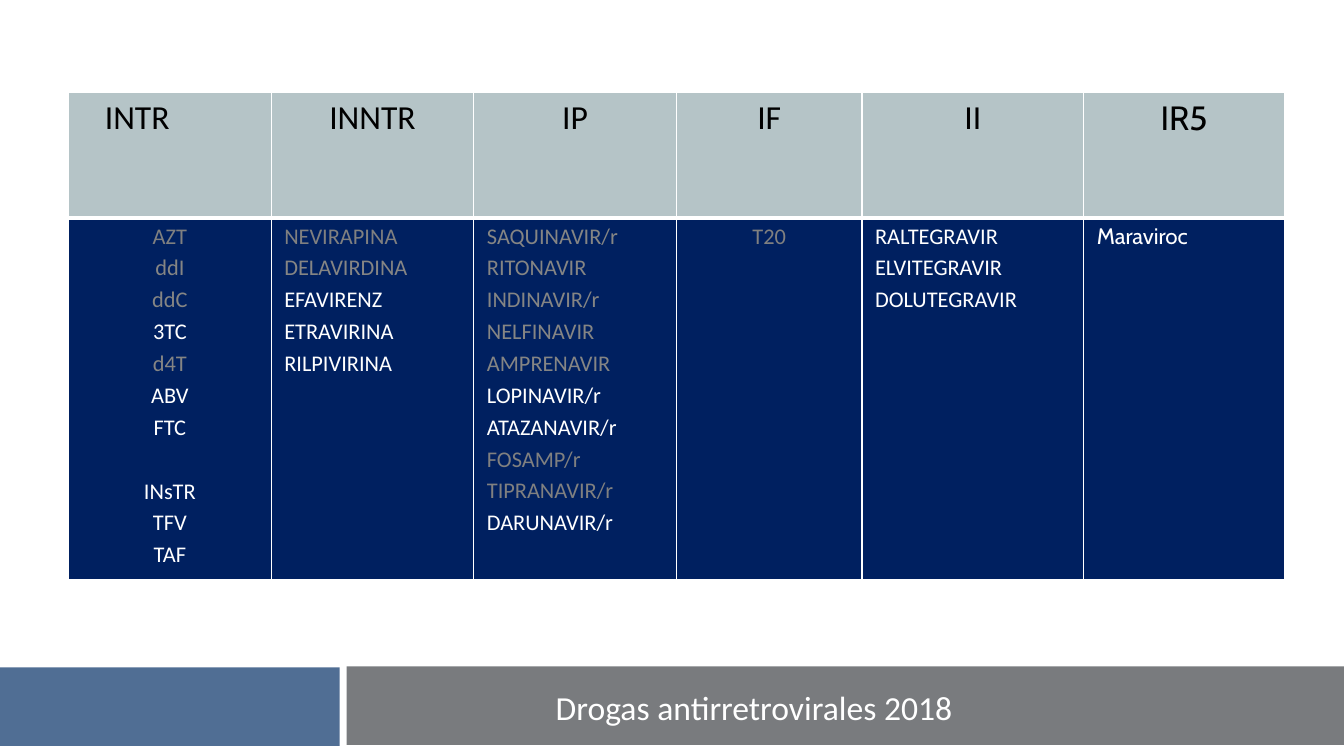
from dataclasses import dataclass

from lxml import etree
from pptx import Presentation, util as u
from pptx.dml.color import RGBColor
from pptx.enum import shapes, text
from pptx.oxml import ns


@dataclass(frozen=True)
class Theme:
    header: str = "B5C4C7"
    body: str = "002060"
    blue: str = "506E94"
    grey: str = "797B7E"
    black: str = "000000"
    white: str = "FFFFFF"
    retired: str = "858584"
    withdrawn: str = "808080"
    font: str = "Calibri"
    accent_font: str = "Cabin"
    large: int = 24
    small: int = 16


THEME = Theme()
CENTER, LEFT = text.PP_ALIGN.CENTER, text.PP_ALIGN.LEFT
DRUG_GAP = 3.2
GROUP_GAP = 26

# Class, column width in percent, alignment, font, drugs grouped by colour
DRUG_CLASSES = [
    ("INTR", 15.08, CENTER, THEME.font, [
        (THEME.withdrawn, "AZT"), (THEME.retired, "ddI ddC"), (THEME.white, "3TC"),
        (THEME.retired, "d4T"), (THEME.white, "ABV FTC INsTR TFV TAF")]),
    ("INNTR", 15.08, LEFT, THEME.font, [
        (THEME.withdrawn, "NEVIRAPINA"), (THEME.retired, "DELAVIRDINA"),
        (THEME.white, "EFAVIRENZ ETRAVIRINA RILPIVIRINA")]),
    ("IP", 15.08, LEFT, THEME.font, [
        (THEME.retired, "SAQUINAVIR/r RITONAVIR INDINAVIR/r NELFINAVIR AMPRENAVIR"),
        (THEME.white, "LOPINAVIR/r ATAZANAVIR/r"),
        (THEME.withdrawn, "FOSAMP/r TIPRANAVIR/r"), (THEME.white, "DARUNAVIR/r")]),
    ("IF", 13.8, CENTER, THEME.font, [(THEME.withdrawn, "T20")]),
    ("II", 16.5, LEFT, THEME.font, [
        (THEME.white, "RALTEGRAVIR ELVITEGRAVIR DOLUTEGRAVIR")]),
    ("IR5", 14.93, LEFT, THEME.accent_font, [(THEME.white, "Maraviroc")]),
]
ROW_HEIGHTS = (16.53, 47.87)


def write(paragraph, words, *, size, color, font=THEME.font, align=LEFT, before=0):
    paragraph.alignment = align
    paragraph.space_before = u.Pt(before)
    run = paragraph.add_run()
    run.text = words
    run.font.size = u.Pt(size)
    run.font.name = font
    run.font.color.rgb = RGBColor.from_string(color)


def set_borders(cell, **widths):
    """Draw white cell borders; widths in points are keyed by side, L R T B."""
    properties = cell._tc.get_or_add_tcPr()
    for side, width in widths.items():
        line = etree.SubElement(properties, ns.qn(f"a:ln{side}"), w=str(u.Pt(width)))
        fill = etree.SubElement(line, ns.qn("a:solidFill"))
        etree.SubElement(fill, ns.qn("a:srgbClr"), val=THEME.white)


class SlideBuilder:
    """Places elements on one slide; lengths are percentages of its size."""

    def __init__(self, presentation, theme):
        self.width, self.height = presentation.slide_width, presentation.slide_height
        self.theme = theme
        self.slide = presentation.slides.add_slide(presentation.slide_layouts[5])

    def across(self, share):
        return round(self.width * share / 100)

    def down(self, share):
        return round(self.height * share / 100)

    def box(self, left, top, width, height):
        return self.across(left), self.down(top), self.across(width), self.down(height)

    def bar(self, left, top, width, height, color):
        shape = self.slide.shapes.add_shape(
            shapes.MSO_SHAPE.RECTANGLE, *self.box(left, top, width, height))
        shape.shadow.inherit = False
        shape.fill.solid()
        shape.fill.fore_color.rgb = RGBColor.from_string(color)
        shape.line.fill.background()

    def title(self, words, left, top, width, height):
        title = self.slide.shapes.title
        title.left, title.top, title.width, title.height = self.box(left, top, width, height)
        frame = title.text_frame
        frame.word_wrap = False
        frame.auto_size = text.MSO_AUTO_SIZE.SHAPE_TO_FIT_TEXT
        frame.vertical_anchor = text.MSO_ANCHOR.TOP
        write(frame.paragraphs[0], words, size=self.theme.large, color=self.theme.white)
        # Bring the title in front of the footer bars
        title.element.getparent().append(title.element)

    def cell(self, cell, fill, top, bottom):
        cell.margin_left = cell.margin_right = u.Inches(0.13)
        cell.margin_top = cell.margin_bottom = u.Inches(0.05)
        set_borders(cell, L=1, R=1, T=top, B=bottom)
        cell.fill.solid()
        cell.fill.fore_color.rgb = RGBColor.from_string(fill)
        return cell.text_frame

    def drug_table(self, left, top, drug_classes, row_heights):
        total_width = sum(width for _, width, *_ in drug_classes)
        table = self.slide.shapes.add_table(
            len(row_heights), len(drug_classes),
            *self.box(left, top, total_width, sum(row_heights))).table
        table.first_row = table.horz_banding = False
        for row, height in zip(table.rows, row_heights):
            row.height = self.down(height)

        for column, (name, width, align, font, groups) in enumerate(drug_classes):
            table.columns[column].width = self.across(width)
            header = self.cell(table.cell(0, column), self.theme.header, 1, 3)
            write(header.paragraphs[0], name, size=self.theme.large, font=font,
                  color=self.theme.black, align=CENTER if column else LEFT)

            body = self.cell(table.cell(1, column), self.theme.body, 3, 1)
            drugs = [(drug, color) for color, names in groups for drug in names.split()]
            for index, (drug, color) in enumerate(drugs):
                paragraph = body.add_paragraph() if index else body.paragraphs[0]
                gap = GROUP_GAP if drug == "INsTR" else DRUG_GAP
                write(paragraph, drug, size=self.theme.small, color=color, font=font,
                      align=align, before=gap if index else 0)
        table.cell(0, 0).margin_left = u.Inches(0.36)


def main():
    presentation = Presentation()
    presentation.slide_width = u.Inches(13.33)
    presentation.slide_height = u.Inches(7.5)
    builder = SlideBuilder(presentation, THEME)
    builder.bar(25.8, 88.13, 74.2, 10.4, THEME.grey)
    builder.bar(0, 88.27, 25.27, 10.4, THEME.blue)
    builder.drug_table(5.1, 12.27, DRUG_CLASSES, ROW_HEIGHTS)
    builder.title("Drogas antirretrovirales 2018", 40.6, 90.13, 31.3, 6.67)
    presentation.save("out.pptx")


if __name__ == "__main__":
    main()
